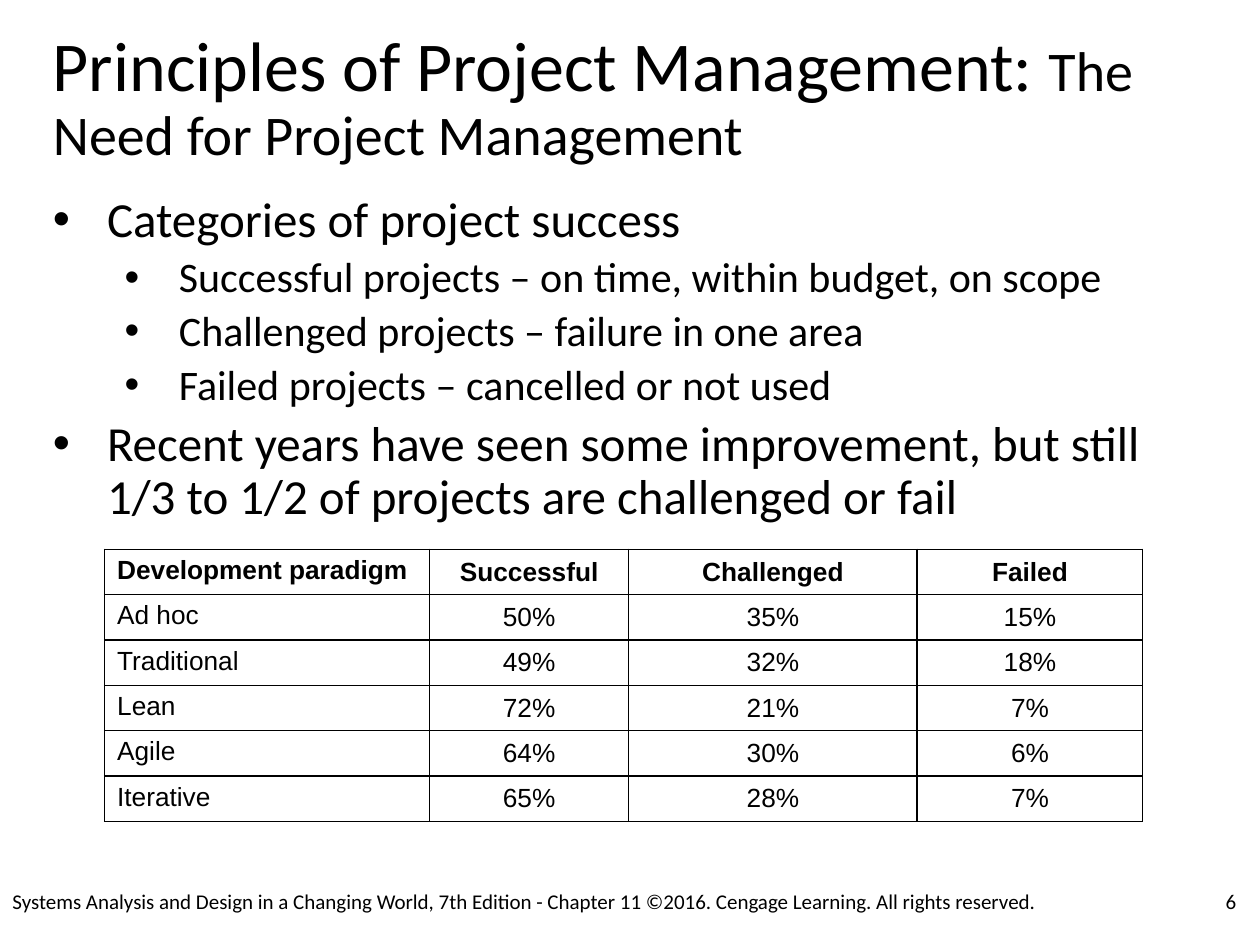
from dataclasses import dataclass

from lxml.etree import SubElement
from pptx import Presentation
from pptx.dml.color import RGBColor
from pptx.enum.text import MSO_ANCHOR, PP_ALIGN
from pptx.oxml.ns import qn
from pptx.util import Inches, Pt


@dataclass(frozen=True)
class Theme:
    ink: RGBColor = RGBColor(0, 0, 0)
    paper: RGBColor = RGBColor(255, 255, 255)
    font: str = "Calibri"
    grid_font: str = "Arial"
    title: int = 40
    sub: int = 32
    levels: tuple = (28, 24)
    grid: int = 15
    foot: int = 12
    leading: float = 0.9
    rule: float = 1


class Deck:
    def __init__(self, theme):
        self.theme = theme
        self.file = Presentation()
        self.file.slide_width = Inches(10)
        self.file.slide_height = Inches(7.5)
        self.slide = self.file.slides.add_slide(self.file.slide_layouts[6])

    def style(self, font, size, name=None, bold=False):
        font.name = name or self.theme.font
        font.size = Pt(size)
        font.bold = bold
        font.color.rgb = self.theme.ink

    def frame(self, box, inset=None):
        shape = self.slide.shapes.add_textbox(*map(Inches, box))
        frame = shape.text_frame
        frame.word_wrap = True
        if inset is not None:
            frame.margin_left = frame.margin_right = Inches(inset)
            frame.margin_top = frame.margin_bottom = Inches(inset)
        return frame

    def title(self, box, parts):
        line = self.frame(box, 0).paragraphs[0]
        line.line_spacing = self.theme.leading
        for text, size in zip(parts, (self.theme.title, self.theme.sub)):
            run = line.add_run()
            run.text = text
            self.style(run.font, size)

    def bullets(self, box, items):
        frame = self.frame(box, 0)
        for i, (level, text) in enumerate(items):
            line = frame.add_paragraph() if i else frame.paragraphs[0]
            size = self.theme.levels[level]
            line.text = text
            line.level = level
            line.line_spacing = self.theme.leading
            line.space_before = Pt(0.2 * size if i else 0)
            props = line._p.get_or_add_pPr()
            props.set("marL", str(Inches((0.43, 1)[level])))
            props.set("indent", str(Inches(-0.43)))
            SubElement(props, qn("a:buFont"), typeface="Arial")
            SubElement(props, qn("a:buChar"), char="•")
            self.style(line.font, size)

    def border(self, cell):
        """Rule all four sides; call before the fill is set."""
        props = cell._tc.get_or_add_tcPr()
        for side in ("lnL", "lnR", "lnT", "lnB"):
            edge = SubElement(props, qn(f"a:{side}"), w=str(Pt(self.theme.rule)))
            fill = SubElement(edge, qn("a:solidFill"))
            SubElement(fill, qn("a:srgbClr"), val=str(self.theme.ink))

    def table(self, box, widths, rows):
        grid = self.slide.shapes.add_table(
            len(rows), len(widths), *map(Inches, box)).table
        for col, width in zip(grid.columns, widths):
            col.width = Inches(width)
        for r, row in enumerate(rows):
            for c, text in enumerate(row):
                cell = grid.cell(r, c)
                self.border(cell)
                cell.fill.solid()
                cell.fill.fore_color.rgb = self.theme.paper
                cell.text = text
                line = cell.text_frame.paragraphs[0]
                if c:
                    cell.vertical_anchor = MSO_ANCHOR.MIDDLE
                    line.alignment = PP_ALIGN.CENTER
                self.style(line.font, self.theme.grid,
                           self.theme.grid_font, r == 0)

    def footer(self, box, text, align=PP_ALIGN.LEFT):
        frame = self.frame(box)
        frame.vertical_anchor = MSO_ANCHOR.MIDDLE
        line = frame.paragraphs[0]
        line.text = text
        line.alignment = align
        self.style(line.font, self.theme.foot)


def main():
    deck = Deck(Theme())
    deck.title((0.42, 0.25, 9.17, 1.08), (
        "Principles of Project Management: ",
        "The Need for Project Management"))
    deck.bullets((0.42, 1.55, 9.17, 2.7), (
        (0, "Categories of project success"),
        (1, "Successful projects – on time, within budget, on scope"),
        (1, "Challenged projects – failure in one area"),
        (1, "Failed projects – cancelled or not used"),
        (0, "Recent years have seen some improvement, but still "
            "1/3 to 1/2 of projects are challenged or fail")))
    deck.table((0.83, 4.36, 8.25, 2.16), (2.58, 1.58, 2.29, 1.79), (
        ("Development paradigm", "Successful", "Challenged", "Failed"),
        ("Ad hoc", "50%", "35%", "15%"),
        ("Traditional", "49%", "32%", "18%"),
        ("Lean", "72%", "21%", "7%"),
        ("Agile", "64%", "30%", "6%"),
        ("Iterative", "65%", "28%", "7%")))
    deck.footer((9.08, 6.95, 0.83, 0.4), "6", PP_ALIGN.RIGHT)
    deck.footer((0, 6.95, 8.42, 0.4),
                "Systems Analysis and Design in a Changing World, 7th Edition"
                " - Chapter 11 ©2016. Cengage Learning. All rights reserved.")
    deck.file.save("out.pptx")


if __name__ == "__main__":
    main()
